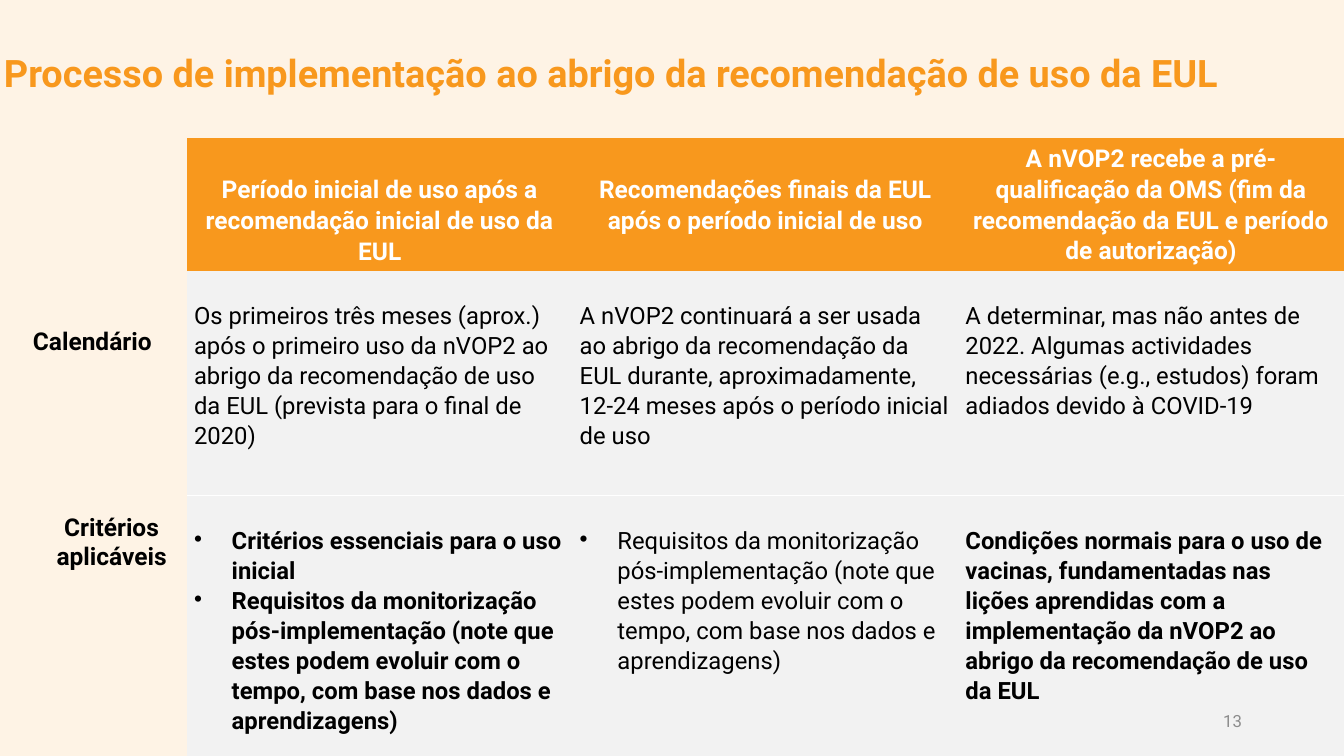
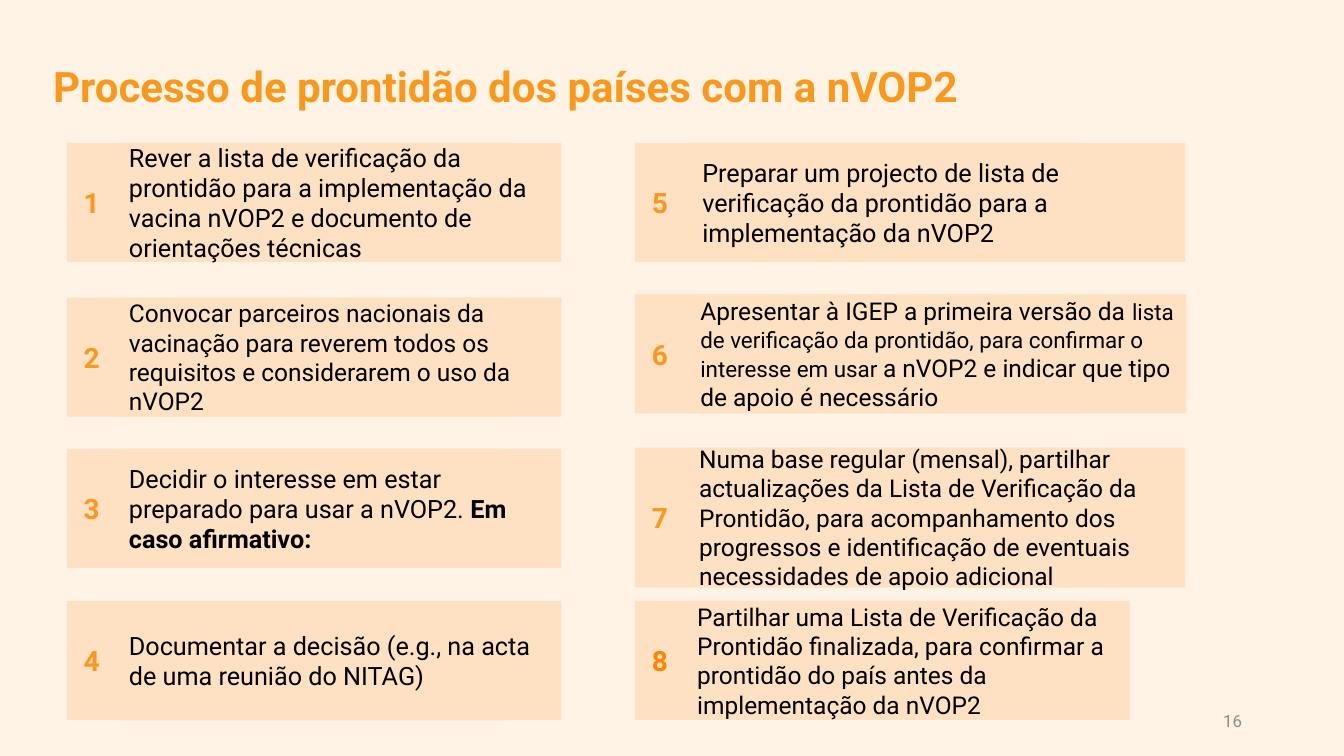
from dataclasses import dataclass

from lxml.etree import SubElement
from pptx import Presentation
from pptx.dml.color import RGBColor
from pptx.enum.shapes import MSO_SHAPE
from pptx.enum.text import MSO_ANCHOR, PP_ALIGN
from pptx.oxml import parse_xml
from pptx.oxml.ns import nsdecls, qn
from pptx.slide import Slide
from pptx.table import _Cell
from pptx.text.text import TextFrame, _Paragraph
from pptx.util import Cm, Pt


@dataclass(frozen=True)
class Theme:
    font: str = "Roboto"
    background: str = "FEF3E5"
    accent: str = "F8981D"
    strong_accent: str = "FF8500"
    card: str = "FEE0C3"
    cell: str = "F2F2F2"
    text: str = "000000"
    white: str = "FFFFFF"
    muted: str = "8C8C8C"
    wide_title_size: float = 27
    title_size: float = 30
    number_size: float = 20
    large_size: float = 18
    body_size: float = 17.5
    cell_size: float = 17
    small_size: float = 16
    footer_size: float = 12


THEME = Theme()


@dataclass(frozen=True)
class Run:
    text: str
    size: float = THEME.body_size
    bold: bool = False


@dataclass(frozen=True)
class CellContent:
    paragraphs: tuple[str, ...]
    bold: bool = False
    bullets: bool = False
    top_margin: float = 0.75


@dataclass(frozen=True)
class Card:
    """A numbered step; lengths are in centimetres."""
    number: int
    left: float
    top: float
    text_offset: float
    text_width: float
    runs: tuple[Run, ...]
    height: float = 3
    number_color: str = THEME.accent


LEFT_COLUMN, RIGHT_COLUMN = 1.68, 16

CARDS = (
    Card(1, LEFT_COLUMN, 3.6, 1.32, 11.15, (
        Run("Rever a lista de verificação da prontidão para a implementação da "
            "vacina nVOP2 e documento de orientações técnicas", THEME.large_size),)),
    Card(2, LEFT_COLUMN, 7.5, 1.32, 11.15, (
        Run("Convocar parceiros nacionais da vacinação para reverem todos os "
            "requisitos e considerarem o uso da nVOP2"),)),
    Card(3, LEFT_COLUMN, 11.31, 1.32, 11.15, (
        Run("Decidir o interesse em estar preparado para usar a nVOP2. ", THEME.large_size),
        Run("Em caso afirmativo:", THEME.large_size, True))),
    Card(4, LEFT_COLUMN, 15.15, 1.32, 11.15, (
        Run("Documentar a decisão (e.g., na acta de uma reunião do NITAG)",
            THEME.large_size),)),
    Card(5, RIGHT_COLUMN, 3.6, 1.45, 12.42, (
        Run("Preparar um projecto de lista de verificação da prontidão para a "
            "implementação da nVOP2", THEME.large_size),)),
    Card(6, RIGHT_COLUMN, 7.42, 1.4, 12.5, (
        Run("Apresentar à IGEP a primeira versão da "),
        Run("lista de verificação da prontidão, para confirmar o interesse em usar ",
            THEME.small_size),
        Run("a nVOP2 e indicar que tipo de apoio é necessário"))),
    Card(7, RIGHT_COLUMN, 11.28, 1.37, 12.5, (
        Run("Numa base regular (mensal), partilhar actualizações da Lista de "
            "Verificação da Prontidão, para acompanhamento dos progressos e "
            "identificação de eventuais necessidades de apoio adicional"),), height=3.52),
    Card(8, RIGHT_COLUMN, 15.14, 1.32, 11.15, (
        Run("Partilhar uma Lista de Verificação da Prontidão finalizada, para "
            "confirmar a prontidão do país antes da implementação da nVOP2"),),
        number_color=THEME.strong_accent),
)

MONITORING = ("Requisitos da monitorização pós-implementação (note que estes podem "
              "evoluir com o tempo, com base nos dados e aprendizagens)")

HEADER_CELLS = (
    CellContent(("Período inicial de uso após a recomendação inicial de uso da EUL",),
                bold=True, top_margin=0.78),
    CellContent(("Recomendações finais da EUL após o período inicial de uso",),
                bold=True, top_margin=0),
    CellContent(("A nVOP2 recebe a pré-qualificação da OMS (fim da recomendação da EUL "
                 "e período de autorização)",), bold=True, top_margin=0),
)

BODY_CELLS = (
    (
        CellContent(("Os primeiros três meses (aprox.) após o primeiro uso da nVOP2 ao "
                     "abrigo da recomendação de uso da EUL (prevista para o final de 2020)",)),
        CellContent(("A nVOP2 continuará a ser usada ao abrigo da recomendação da EUL "
                     "durante, aproximadamente, 12-24 meses após o período inicial de uso",)),
        CellContent(("A determinar, mas não antes de 2022. Algumas actividades necessárias "
                     "(e.g., estudos) foram adiados devido à COVID-19",)),
    ),
    (
        CellContent(("Critérios essenciais para o uso inicial", MONITORING),
                    bold=True, bullets=True),
        CellContent((MONITORING,), bullets=True),
        CellContent(("Condições normais para o uso de vacinas, fundamentadas nas lições "
                     "aprendidas com a implementação da nVOP2 ao abrigo da recomendação "
                     "de uso da EUL",), bold=True),
    ),
)


def add_run(paragraph: _Paragraph, text: str, *, size: float = THEME.body_size,
            color: str = THEME.text, bold: bool = False) -> None:
    run = paragraph.add_run()
    run.text = text
    run.font.name = THEME.font
    run.font.size = Pt(size)
    run.font.bold = bold
    run.font.color.rgb = RGBColor.from_string(color)


def add_text(slide: Slide, text: str, left: float, top: float, width: float, height: float, *,
             align: PP_ALIGN = PP_ALIGN.LEFT, anchor: MSO_ANCHOR = MSO_ANCHOR.TOP,
             size: float = THEME.body_size, color: str = THEME.text,
             bold: bool = False) -> None:
    """Add a wrapping text box; lengths are in centimetres."""
    shape = slide.shapes.add_textbox(Cm(left), Cm(top), Cm(width), Cm(height))
    frame = shape.text_frame
    frame.word_wrap = True
    frame.vertical_anchor = anchor
    paragraph = frame.paragraphs[0]
    paragraph.alignment = align
    add_run(paragraph, text, size=size, color=color, bold=bold)


def add_title(slide: Slide, text: str, left: float, top: float, width: float,
              size: float) -> None:
    add_text(slide, text, left, top, width, 1.5, size=size, color=THEME.accent, bold=True)


def add_slide_number(slide: Slide, number: int) -> None:
    add_text(slide, str(number), 23.93, 17.65, 7.62, 1.01, align=PP_ALIGN.RIGHT,
             anchor=MSO_ANCHOR.MIDDLE, size=THEME.footer_size, color=THEME.muted)


def add_bullet(paragraph: _Paragraph) -> None:
    properties = paragraph._p.get_or_add_pPr()
    properties.set("marL", str(Cm(0.95)))
    properties.set("indent", str(-Cm(0.95)))
    SubElement(properties, qn("a:buChar"), char="•")


def add_border(cell: _Cell, side: str) -> None:
    border = parse_xml(
        f'<a:{side} {nsdecls("a")} w="{Pt(1)}"><a:solidFill><a:srgbClr val="{THEME.white}"/>'
        f'</a:solidFill></a:{side}>')
    cell._tc.get_or_add_tcPr().insert(0, border)


def fill_cell(cell: _Cell, content: CellContent, *, header: bool = False) -> None:
    cell.fill.solid()
    cell.fill.fore_color.rgb = RGBColor.from_string(THEME.accent if header else THEME.cell)
    cell.margin_left = cell.margin_right = Cm(0.18)
    cell.margin_top, cell.margin_bottom = Cm(content.top_margin), Cm(0)
    cell.vertical_anchor = MSO_ANCHOR.MIDDLE if header else MSO_ANCHOR.TOP
    frame = cell.text_frame
    for index, text in enumerate(content.paragraphs):
        paragraph = frame.add_paragraph() if index else frame.paragraphs[0]
        paragraph.alignment = PP_ALIGN.CENTER if header else PP_ALIGN.LEFT
        paragraph.line_spacing = 1.07
        if content.bullets:
            add_bullet(paragraph)
        add_run(paragraph, text, bold=content.bold,
                size=THEME.body_size if header else THEME.cell_size,
                color=THEME.white if header else THEME.text)


def add_phase_table(slide: Slide) -> None:
    row_heights = (3.35, 5.66, 6.55)
    table = slide.shapes.add_table(3, 3, Cm(4.71), Cm(3.48), Cm(29.16),
                                   Cm(sum(row_heights))).table
    no_style_no_grid = "{2D5ABB26-0587-4C30-8999-92F81FD0307C}"
    table._tbl.tblPr.find(qn("a:tableStyleId")).text = no_style_no_grid
    table.first_row = table.horz_banding = False
    for row, height in zip(table.rows, row_heights):
        row.height = Cm(height)
    for column, content in enumerate(HEADER_CELLS):
        fill_cell(table.cell(0, column), content, header=True)
    for row_index, (contents, side) in enumerate(zip(BODY_CELLS, ("lnB", "lnT")), start=1):
        for column, content in enumerate(contents):
            cell = table.cell(row_index, column)
            fill_cell(cell, content)
            add_border(cell, side)


def add_card(slide: Slide, card: Card) -> None:
    group = slide.shapes.add_group_shape()

    def add_panel(left: float, width: float) -> TextFrame:
        shape = group.shapes.add_shape(MSO_SHAPE.RECTANGLE, Cm(left), Cm(card.top),
                                       Cm(width), Cm(card.height))
        shape.shadow.inherit = False
        shape.fill.solid()
        shape.fill.fore_color.rgb = RGBColor.from_string(THEME.card)
        shape.line.fill.background()
        frame = shape.text_frame
        frame.word_wrap = True
        frame.vertical_anchor = MSO_ANCHOR.MIDDLE
        frame.paragraphs[0].alignment = PP_ALIGN.LEFT
        return frame

    number_frame = add_panel(card.left, 11.15)
    number_frame.margin_left = Cm(0.43)
    add_run(number_frame.paragraphs[0], str(card.number), size=THEME.number_size,
            color=card.number_color, bold=True)
    text_frame = add_panel(card.left + card.text_offset, card.text_width)
    for run in card.runs:
        add_run(text_frame.paragraphs[0], run.text, size=run.size, bold=run.bold)


def build_implementation_slide(slide: Slide) -> None:
    add_phase_table(slide)
    add_text(slide, "Calendário", 0.58, 8.1, 4.11, 1.02, bold=True)
    add_text(slide, "Critérios aplicáveis", 0.58, 12.78, 4.47, 1.75,
             align=PP_ALIGN.CENTER, bold=True)
    add_title(slide, "Processo de implementação ao abrigo da recomendação de uso da EUL",
              -0.15, 1.12, 35.46, THEME.wide_title_size)
    add_slide_number(slide, 13)


def build_readiness_slide(slide: Slide) -> None:
    add_slide_number(slide, 16)
    add_title(slide, "Processo de prontidão dos países com a nVOP2",
              1.09, 1.4, 28.12, THEME.title_size)
    for card in CARDS:
        add_card(slide, card)


def main() -> None:
    presentation = Presentation()
    presentation.slide_width, presentation.slide_height = Cm(33.87), Cm(19.05)
    background = presentation.slide_master.background.fill
    background.solid()
    background.fore_color.rgb = RGBColor.from_string(THEME.background)
    blank_layout = presentation.slide_layouts[6]
    for build in (build_implementation_slide, build_readiness_slide):
        build(presentation.slides.add_slide(blank_layout))
    presentation.save("out.pptx")


if __name__ == "__main__":
    main()
